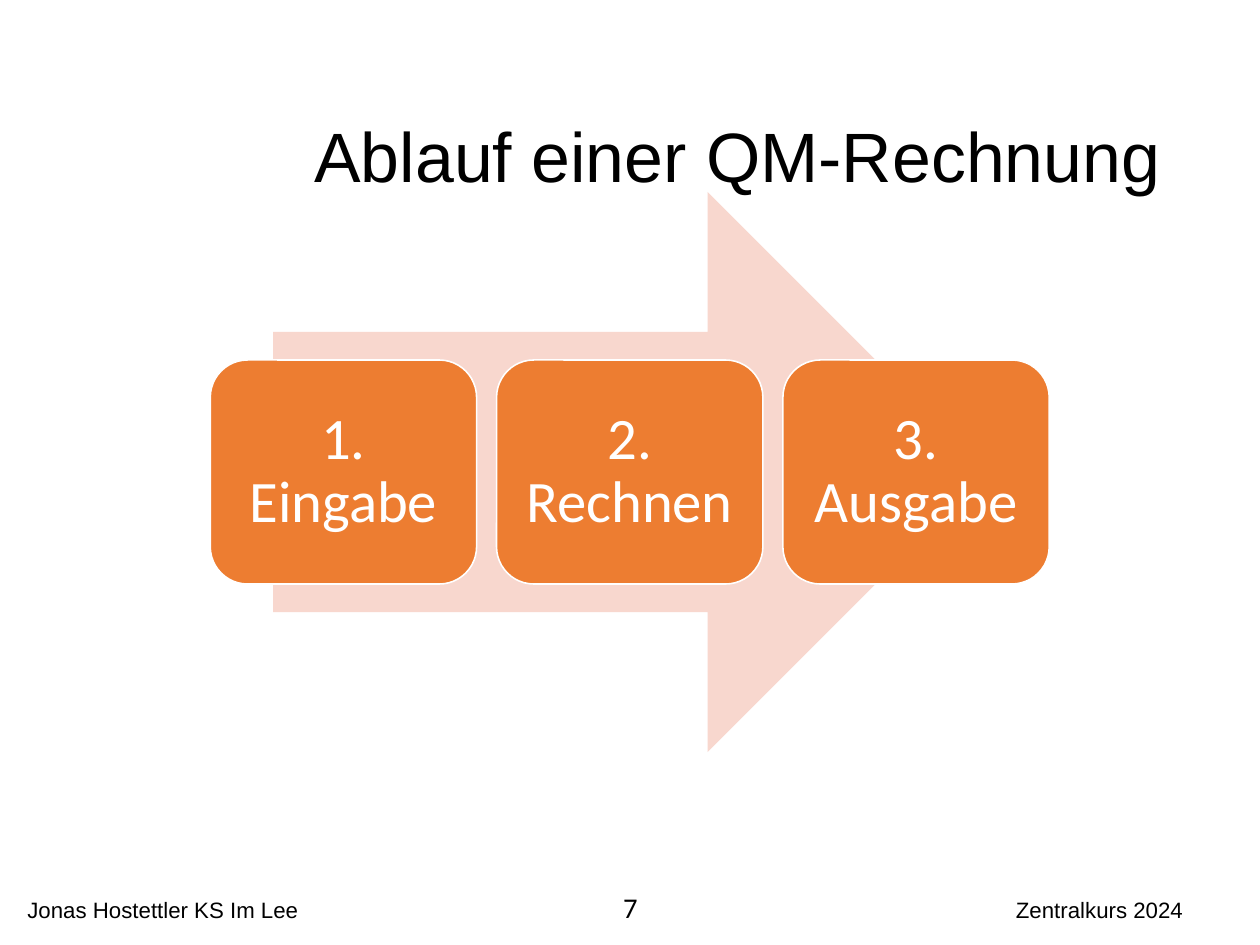
from dataclasses import dataclass

from pptx import Presentation
from pptx.dml.color import RGBColor
from pptx.enum.shapes import MSO_SHAPE as Shape
from pptx.enum.text import MSO_ANCHOR as Anchor, PP_ALIGN as Align
from pptx.slide import Slide
from pptx.text.text import TextFrame
from pptx.util import Inches, Pt

BLACK = RGBColor(0x00, 0x00, 0x00)
WHITE = RGBColor(0xFF, 0xFF, 0xFF)
ORANGE = RGBColor(0xED, 0x7D, 0x31)
PALE_ORANGE = RGBColor(0xF8, 0xD7, 0xCE)

CM_PER_INCH = 2.54
SLIDE_WIDTH = Inches(28 / CM_PER_INCH)
SLIDE_HEIGHT = Inches(21 / CM_PER_INCH)

STEPS = ["1. Eingabe", "2. Rechnen", "3. Ausgabe"]
STEP_LEFT, STEP_TOP = 1.84, 3.15
STEP_WIDTH, STEP_HEIGHT = 2.33, 1.96
LAST_STEP_LEFT = 6.85
STEP_PITCH = (LAST_STEP_LEFT - STEP_LEFT) / (len(STEPS) - 1)
FOOTER_TOP = 7.79


@dataclass
class Label:
    text: str
    left: float
    top: float
    width: float
    height: float
    size: float
    font: str = "Arial"
    align: Align = Align.LEFT
    anchor: Anchor = Anchor.TOP
    margin_x: float = 0
    margin_y: float = 0
    wrap: bool = True


LABELS = [
    Label("Jonas Hostettler KS Im Lee", 0.14, FOOTER_TOP, 2.59, 0.33, 14,
          margin_x=0.1, margin_y=0.05, wrap=False),
    Label("Zentralkurs 2024", 8.79, FOOTER_TOP, 1.67, 0.33, 14,
          margin_x=0.1, margin_y=0.05, wrap=False),
    Label("7", 3.77, FOOTER_TOP, 3.49, 0.57, 18, font="Calibri",
          align=Align.CENTER),
    Label("Ablauf einer QM-Rechnung", 2.75, 0.98, 7.81, 0.74, 44,
          anchor=Anchor.MIDDLE),
]


def set_margins(tf: TextFrame, x: float, y: float) -> None:
    tf.margin_left = tf.margin_right = Inches(x)
    tf.margin_top = tf.margin_bottom = Inches(y)


def write(tf: TextFrame, text: str, size: float, font: str,
          color: RGBColor, align: Align) -> None:
    p = tf.paragraphs[0]
    p.alignment = align
    r = p.add_run()
    r.text = text
    r.font.size = Pt(size)
    r.font.name = font
    r.font.color.rgb = color


def add_label(slide: Slide, label: Label) -> None:
    sp = slide.shapes.add_textbox(Inches(label.left), Inches(label.top),
                                  Inches(label.width), Inches(label.height))
    tf = sp.text_frame
    tf.word_wrap = label.wrap
    tf.vertical_anchor = label.anchor
    set_margins(tf, label.margin_x, label.margin_y)
    write(tf, label.text, label.size, label.font, BLACK, label.align)


def add_arrow(slide: Slide) -> None:
    sp = slide.shapes.add_shape(Shape.RIGHT_ARROW, Inches(2.39), Inches(1.68),
                                Inches(6.25), Inches(4.9))
    sp.shadow.inherit = False
    sp.fill.solid()
    sp.fill.fore_color.rgb = PALE_ORANGE
    sp.line.fill.background()


def add_step(slide: Slide, index: int, text: str) -> None:
    sp = slide.shapes.add_shape(
        Shape.ROUNDED_RECTANGLE,
        Inches(STEP_LEFT + index * STEP_PITCH), Inches(STEP_TOP),
        Inches(STEP_WIDTH), Inches(STEP_HEIGHT))
    sp.shadow.inherit = False
    sp.fill.solid()
    sp.fill.fore_color.rgb = ORANGE
    sp.line.color.rgb = WHITE
    sp.line.width = Pt(1)
    tf = sp.text_frame
    tf.word_wrap = True
    tf.vertical_anchor = Anchor.MIDDLE
    set_margins(tf, 0.15, 0.15)
    write(tf, text, 37, "Calibri", WHITE, Align.CENTER)
    tf.paragraphs[0].line_spacing = 0.9


def main() -> None:
    prs = Presentation()
    prs.slide_width = SLIDE_WIDTH
    prs.slide_height = SLIDE_HEIGHT
    slide = prs.slides.add_slide(prs.slide_layouts[6])
    for label in LABELS:
        add_label(slide, label)
    add_arrow(slide)
    for index, text in enumerate(STEPS):
        add_step(slide, index, text)
    prs.save("out.pptx")


if __name__ == "__main__":
    main()
